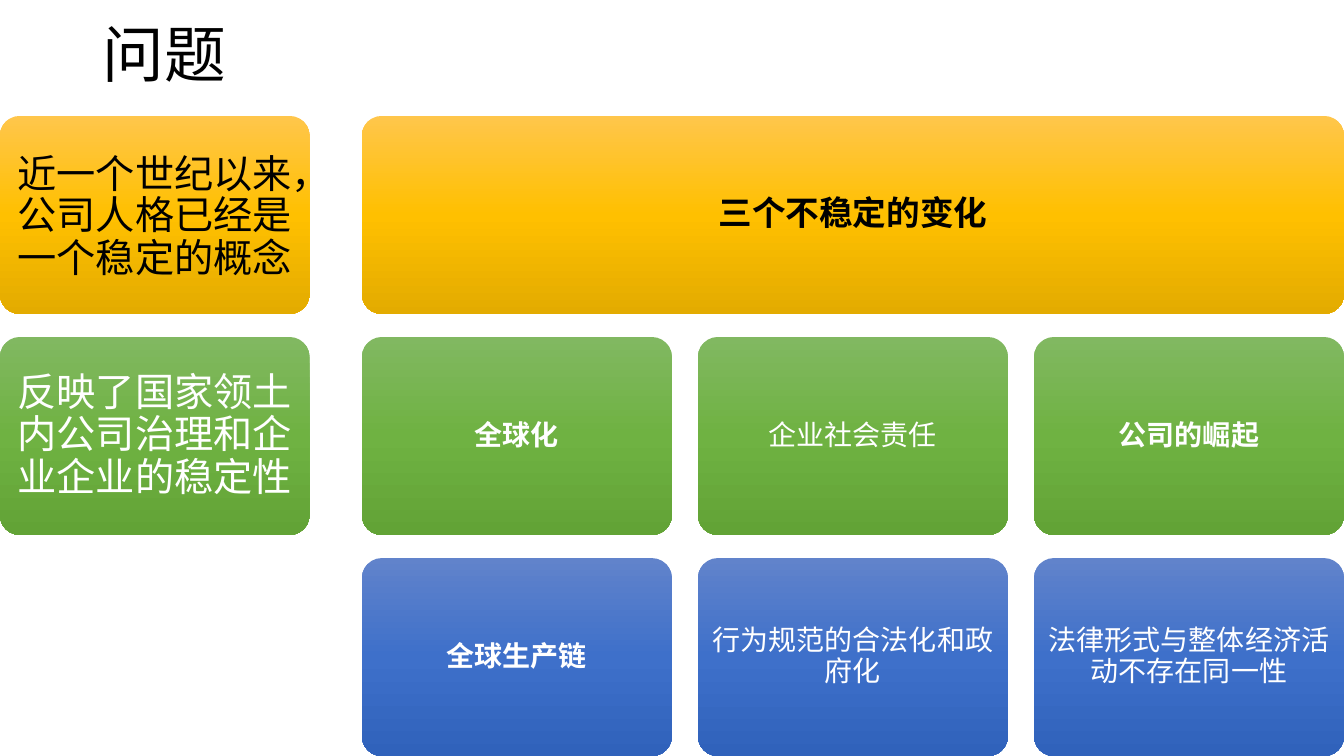
from copy import deepcopy
from dataclasses import dataclass

from pptx import Presentation
from pptx.dml.color import RGBColor
from pptx.enum.shapes import MSO_SHAPE
from pptx.enum.text import MSO_ANCHOR, PP_ALIGN
from pptx.oxml.ns import qn
from pptx.util import Inches, Pt

SLIDE_W, SLIDE_H = 13.33, 7.5


@dataclass(frozen=True)
class Theme:
    font: str = "Calibri"
    dark: str = "000000"
    light: str = "FFFFFF"
    amber: tuple = ("FFC64B", "FFC000", "E3AB00")
    green: tuple = ("81B861", "6FB242", "62A336")
    blue: tuple = ("6183CB", "3E70CA", "3062BB")
    title_size: int = 44
    statement_size: int = 28
    heading_size: int = 24
    topic_size: int = 20


THEME = Theme()


@dataclass(frozen=True)
class Grid:
    """Equal columns and rows inside a box; lengths in inches."""
    left: float
    top: float
    width: float
    height: float
    columns: int
    rows: int = 3
    column_gap: float = 0.26
    row_gap: float = 0.23

    def cell(self, column, row, span=1):
        cell_w = (self.width + self.column_gap) / self.columns - self.column_gap
        cell_h = (self.height + self.row_gap) / self.rows - self.row_gap
        return (self.left + column * (cell_w + self.column_gap),
                self.top + row * (cell_h + self.row_gap),
                span * (cell_w + self.column_gap) - self.column_gap, cell_h)


def style_paragraph(paragraph, size, color, bold=False):
    font = paragraph.font
    font.name, font.size, font.bold = THEME.font, Pt(size), bold
    font.color.rgb = RGBColor.from_string(color)


def fill_downwards(card, colors):
    """Fill with three evenly spaced colours running from top to bottom."""
    card.fill.gradient()
    card.fill.gradient_angle = 270
    stop_list = card._element.spPr.find(qn("a:gradFill")).find(qn("a:gsLst"))
    stop_list.insert(1, deepcopy(stop_list[0]))
    for stop, position, color in zip(card.fill.gradient_stops, (0, 0.5, 1), colors):
        stop.position = position
        stop.color.rgb = RGBColor.from_string(color)


def add_card(slide, box, lines, colors, size, bold=False):
    card = slide.shapes.add_shape(MSO_SHAPE.ROUNDED_RECTANGLE, *map(Inches, box))
    card.adjustments[0] = 0.1
    card.shadow.inherit = False
    card.line.fill.background()
    fill_downwards(card, colors)
    frame = card.text_frame
    frame.word_wrap = True
    frame.vertical_anchor = MSO_ANCHOR.MIDDLE
    inset = Pt(size * 0.3)
    frame.margin_left = frame.margin_right = inset
    frame.margin_top = frame.margin_bottom = inset
    frame.text = "\n".join(lines)
    color = THEME.dark if colors == THEME.amber else THEME.light
    for paragraph in frame.paragraphs:
        paragraph.alignment = PP_ALIGN.CENTER
        style_paragraph(paragraph, size, color, bold)
    frame.paragraphs[-1].line_spacing = 0.9


def add_title(slide, box, wording):
    frame = slide.shapes.add_textbox(*map(Inches, box)).text_frame
    frame.word_wrap = True
    frame.vertical_anchor = MSO_ANCHOR.MIDDLE
    frame.text = wording
    frame.paragraphs[0].line_spacing = 0.9
    style_paragraph(frame.paragraphs[0], THEME.title_size, THEME.dark)


def add_stability_column(slide, grid):
    add_card(slide, grid.cell(0, 0), ["近一个世纪以来，", "公司人格已经是一个稳定的概念"],
             THEME.amber, THEME.statement_size)
    add_card(slide, grid.cell(0, 1), ["反映了国家领土内公司治理和企业企业的稳定性"],
             THEME.green, THEME.statement_size)


def add_changes(slide, grid):
    add_card(slide, grid.cell(0, 0, span=3), ["三个不稳定的变化"],
             THEME.amber, THEME.heading_size, bold=True)
    changes = [
        (("全球化", True), ("全球生产链", True)),
        (("企业社会责任", False), ("行为规范的合法化和政府化", False)),
        (("公司的崛起", True), ("法律形式与整体经济活动不存在同一性", False)),
    ]
    for column, topics in enumerate(changes):
        for row, (wording, bold) in enumerate(topics, start=1):
            colors = THEME.green if row == 1 else THEME.blue
            add_card(slide, grid.cell(column, row), [wording], colors,
                     THEME.topic_size, bold)


def main():
    presentation = Presentation()
    presentation.slide_width, presentation.slide_height = Inches(SLIDE_W), Inches(SLIDE_H)
    slide = presentation.slides.add_slide(presentation.slide_layouts[6])
    title_h, stability_w, changes_left = 1.15, 3.07, 3.59
    body_h = SLIDE_H - title_h
    add_title(slide, (0.92, 0, 11.5, title_h), "问题")
    add_stability_column(slide, Grid(0, title_h, stability_w, body_h, columns=1))
    add_changes(slide, Grid(changes_left, title_h, SLIDE_W - changes_left, body_h, columns=3))
    presentation.save("out.pptx")


if __name__ == "__main__":
    main()
